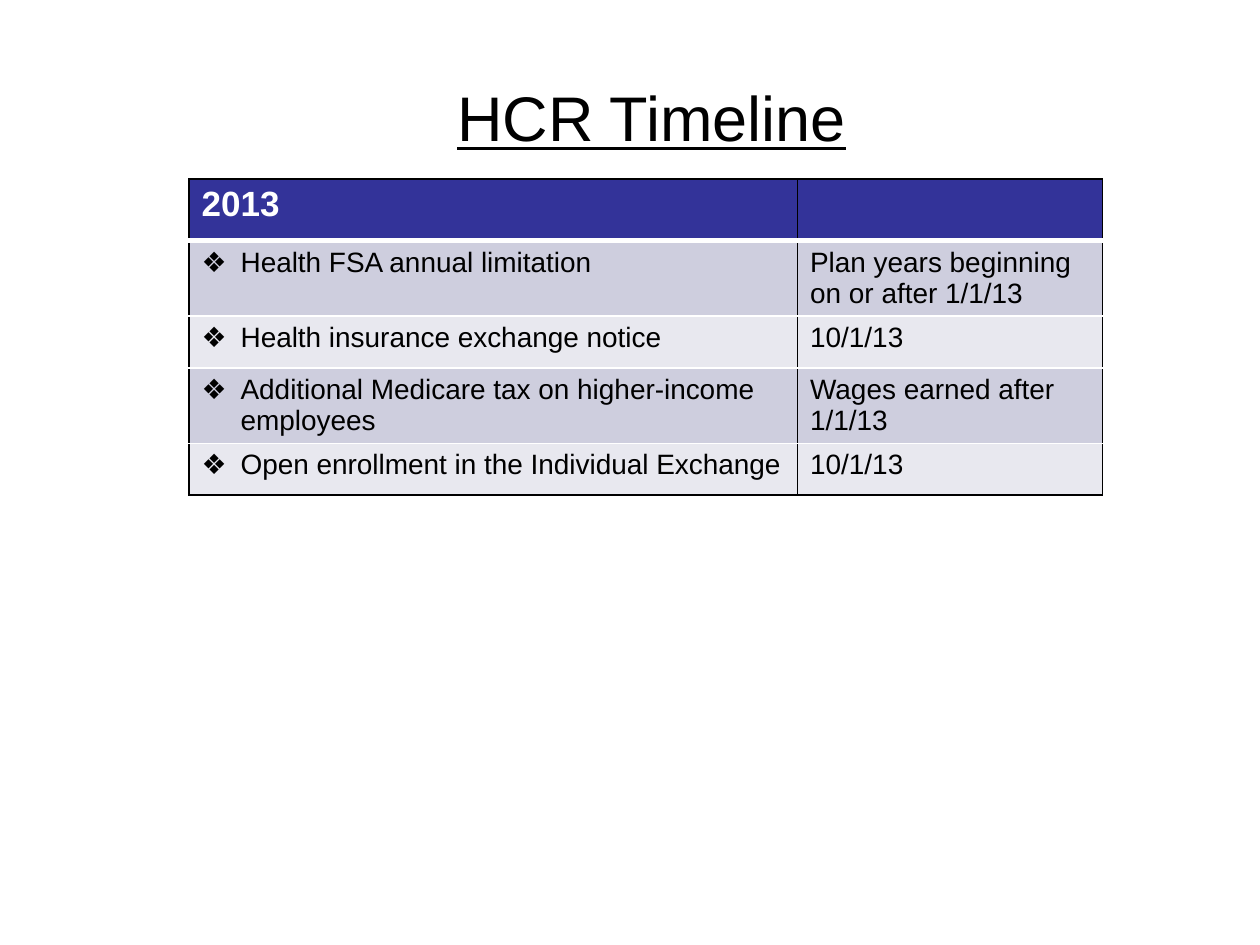
from dataclasses import dataclass

from lxml.etree import SubElement
from pptx import Presentation
from pptx.dml.color import RGBColor
from pptx.enum.text import MSO_ANCHOR, PP_ALIGN
from pptx.oxml.ns import qn
from pptx.util import Inches, Pt


@dataclass(frozen=True)
class Theme:
    font: str = "Arial"
    black: str = "000000"
    white: str = "FFFFFF"
    head: str = "333399"
    bands: tuple = ("CECEDE", "E8E8EF")
    title: int = 36
    year: int = 20
    body: int = 16


def write(frame, text, size, color, font, bold=False, line=False, align=None, mark=None):
    para = frame.paragraphs[0]
    para.alignment = align
    if mark:
        props = para._p.get_or_add_pPr()
        props.set("marL", str(Inches(0.31)))
        props.set("indent", str(-Inches(0.31)))
        SubElement(props, qn("a:buFont"), typeface=font)
        SubElement(props, qn("a:buChar"), char=mark)
    run = para.add_run()
    run.text = text
    run.font.name = font
    run.font.size = Pt(size)
    run.font.bold = bold
    run.font.underline = line
    run.font.color.rgb = RGBColor.from_string(color)


class Deck:
    def __init__(self, theme):
        self.theme = theme
        self.file = Presentation()
        self.file.slide_width = Inches(10)
        self.file.slide_height = Inches(7.5)
        self.slide = self.file.slides.add_slide(self.file.slide_layouts[5])

    def title(self, text, left, top, width, height):
        box = self.slide.shapes.title
        box.left, box.top = Inches(left), Inches(top)
        box.width, box.height = Inches(width), Inches(height)
        frame = box.text_frame
        frame.word_wrap = True
        frame.vertical_anchor = MSO_ANCHOR.MIDDLE
        write(frame, text, self.theme.title, self.theme.black, self.theme.font,
              line=True, align=PP_ALIGN.CENTER)

    def border(self, cell, side, color, width):
        props = cell._tc.get_or_add_tcPr()
        edge = SubElement(props, qn(f"a:ln{side}"), w=str(Pt(width)))
        fill = SubElement(edge, qn("a:solidFill"))
        SubElement(fill, qn("a:srgbClr"), val=color)

    def cell(self, cell, text, row, col, last):
        look = self.theme
        top = look.white if row else look.black
        base = look.black if row == last else look.white
        for side, color in zip("LRTB", (look.black, look.black, top, base)):
            thick = (row == 0 and side == "B") or (row == 1 and side == "T")
            self.border(cell, side, color, 3 if thick else 1)
        cell.fill.solid()
        shade = look.bands[(row - 1) % 2] if row else look.head
        cell.fill.fore_color.rgb = RGBColor.from_string(shade)
        if not text:
            return
        if row:
            write(cell.text_frame, text, look.body, look.black, look.font,
                  mark=None if col else "❖")
        else:
            write(cell.text_frame, text, look.year, look.white, look.font, bold=True)

    def table(self, data, left, top, widths, heights):
        grid = self.slide.shapes.add_table(
            len(data), len(widths), Inches(left), Inches(top),
            Inches(sum(widths)), Inches(sum(heights))).table
        for col, width in zip(grid.columns, widths):
            col.width = Inches(width)
        for row, height in zip(grid.rows, heights):
            row.height = Inches(height)
        for row, texts in enumerate(data):
            for col, text in enumerate(texts):
                self.cell(grid.cell(row, col), text, row, col, len(data) - 1)


def main():
    deck = Deck(Theme())
    deck.title("HCR Timeline", 0.67, 0.3, 9, 1.25)
    data = [
        ("2013", ""),
        ("Health FSA annual limitation", "Plan years beginning on or after 1/1/13"),
        ("Health insurance exchange notice", "10/1/13"),
        ("Additional Medicare tax on higher-income employees", "Wages earned after 1/1/13"),
        ("Open enrollment in the Individual Exchange", "10/1/13"),
    ]
    deck.table(data, 1.5, 1.42, (4.83, 2.42), (0.49, 0.6, 0.41, 0.6, 0.41))
    deck.file.save("out.pptx")


if __name__ == "__main__":
    main()
